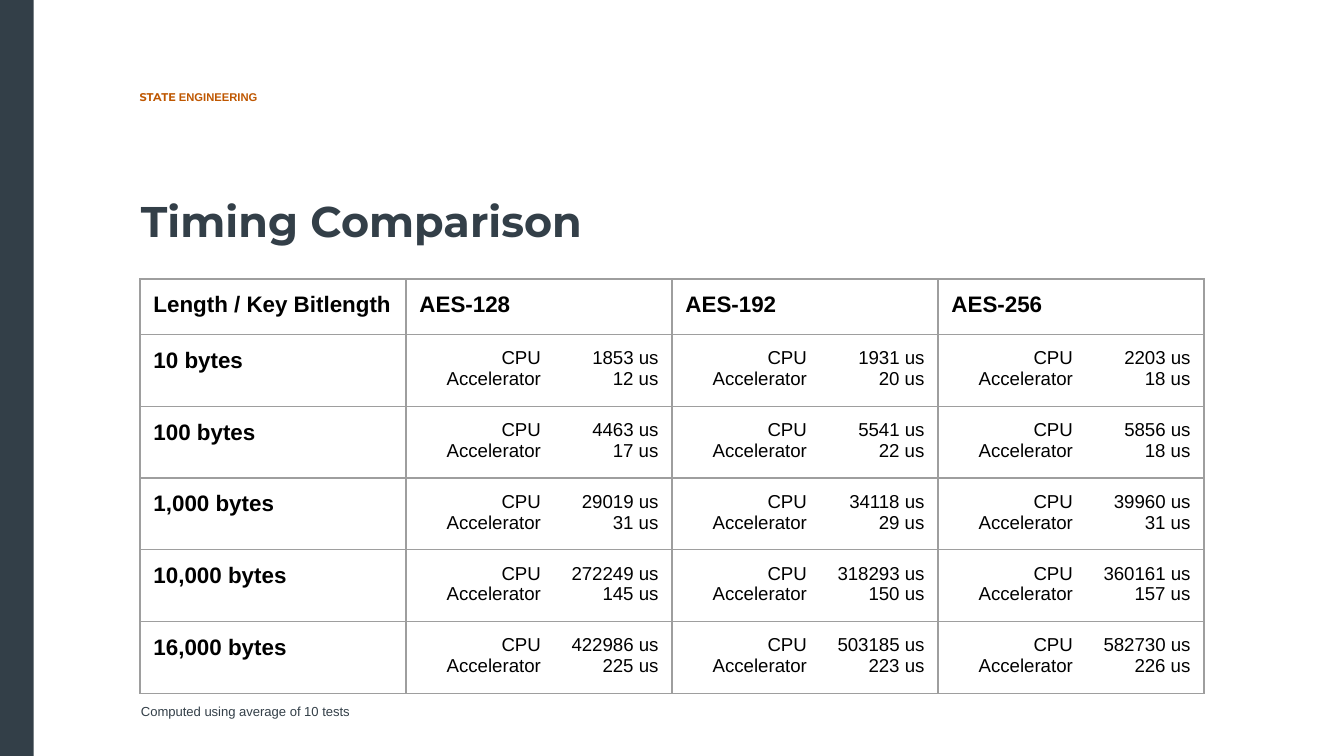
from lxml.etree import SubElement
from pptx import Presentation
from pptx.dml.color import RGBColor
from pptx.enum.shapes import MSO_SHAPE
from pptx.enum.text import MSO_AUTO_SIZE, PP_ALIGN
from pptx.oxml.ns import qn
from pptx.util import Pt

SLATE = "333F48"
ORANGE = "BF5700"
BLACK = "000000"
GRID = "9E9E9E"


def color(value):
    return RGBColor.from_string(value)


def write_text(para, text, size=10, font="Arial", ink=BLACK, bold=False):
    span = para.add_run()
    span.text = text
    span.font.size = Pt(size)
    span.font.name = font
    span.font.bold = bold
    span.font.color.rgb = color(ink)


deck = Presentation()
deck.slide_width, deck.slide_height = Pt(720), Pt(405)
page = deck.slides.add_slide(deck.slide_layouts[6])

side_band = page.shapes.add_shape(MSO_SHAPE.RECTANGLE, 0, 0, Pt(18), Pt(405))
side_band.shadow.inherit = False
side_band.fill.solid()
side_band.fill.fore_color.rgb = color(SLATE)
side_band.line.fill.background()

paras = []
for left, top, width, height in [
    (72, 46.8, 327, 10),
    (72.7, 103, 411, 31),
    (72.7, 371.5, 442, 11.5),
]:
    box = page.shapes.add_textbox(Pt(left), Pt(top), Pt(width), Pt(height))
    frame = box.text_frame
    frame.word_wrap = True
    frame.auto_size = MSO_AUTO_SIZE.NONE
    frame.margin_left = frame.margin_right = Pt(2.8)
    frame.margin_top = frame.margin_bottom = Pt(1.4)
    paras.append(frame.paragraphs[0])

brand, title, footnote = paras
write_text(brand, "STATE", size=6, font="Montserrat", ink=ORANGE, bold=True)
write_text(brand, " ENGINEERING", size=6, ink=ORANGE, bold=True)
write_text(title, "Timing Comparison", size=23, font="Montserrat", ink=SLATE, bold=True)
footnote.alignment = PP_ALIGN.JUSTIFY
footnote.line_spacing = 1.5
write_text(footnote, "Computed using average of 10 tests", size=7, ink=SLATE)

headings = ["Length / Key Bitlength", "AES-128", "AES-192", "AES-256"]
timings = [
    ("10 bytes", (1853, 12), (1931, 20), (2203, 18)),
    ("100 bytes", (4463, 17), (5541, 22), (5856, 18)),
    ("1,000 bytes", (29019, 31), (34118, 29), (39960, 31)),
    ("10,000 bytes", (272249, 145), (318293, 150), (360161, 157)),
    ("16,000 bytes", (422986, 225), (503185, 223), (582730, 226)),
]
rows = [headings] + timings

table = page.shapes.add_table(
    len(rows), len(headings), Pt(75), Pt(149.5), Pt(570), Pt(222)
).table
table.first_row = False
table.horz_banding = False
for column in table.columns:
    column.width = Pt(142.5)

for row_index, row in enumerate(rows):
    table.rows[row_index].height = Pt(38.45 if row_index else 29.75)
    for column_index, content in enumerate(row):
        cell = table.cell(row_index, column_index)
        cell.margin_left = cell.margin_right = Pt(7.2)
        cell.margin_top = cell.margin_bottom = Pt(7.2)
        properties = cell._tc.get_or_add_tcPr()
        for side in ("a:lnL", "a:lnR", "a:lnT", "a:lnB"):
            border = SubElement(properties, qn(side), w=str(Pt(0.75)))
            paint = SubElement(border, qn("a:solidFill"))
            SubElement(paint, qn("a:srgbClr"), val=GRID)
        cell.fill.background()

        para = cell.text_frame.paragraphs[0]
        if isinstance(content, str):
            write_text(para, content, size=12, bold=True)
            continue
        for label, duration in zip(("CPU", "Accelerator"), content):
            if label == "Accelerator":
                para = cell.text_frame.add_paragraph()
            tabs = SubElement(para._p.get_or_add_pPr(), qn("a:tabLst"))
            for stop in (65, 128):
                SubElement(tabs, qn("a:tab"), pos=str(Pt(stop)), algn="r")
            write_text(para, f"\t{label}\t{duration} us")

deck.save("out.pptx")
